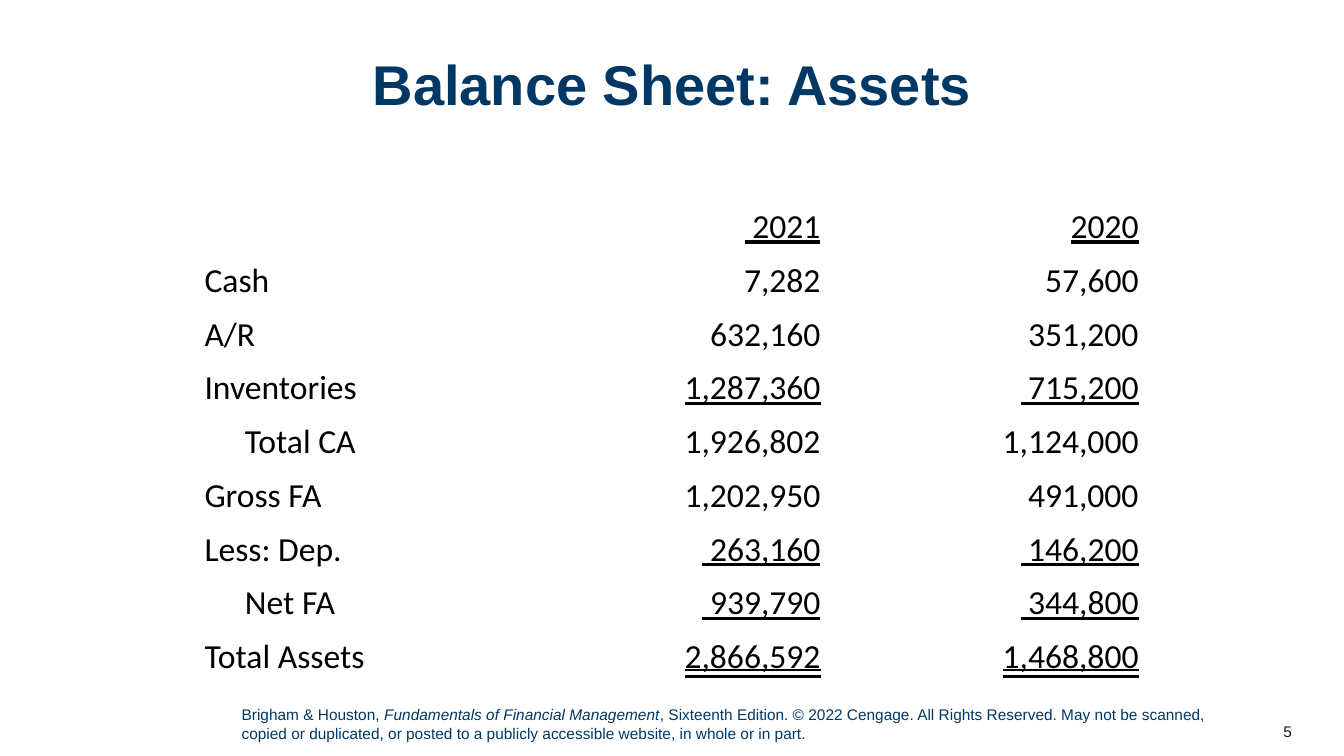
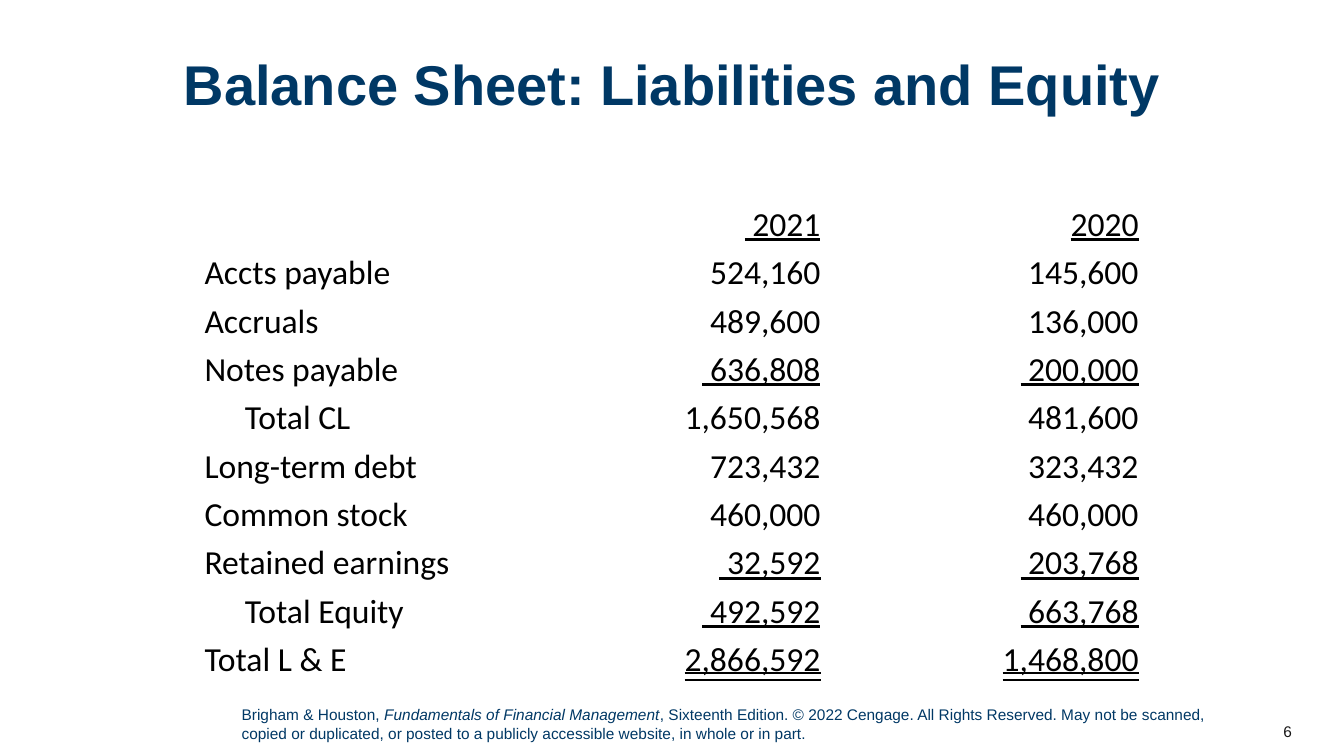
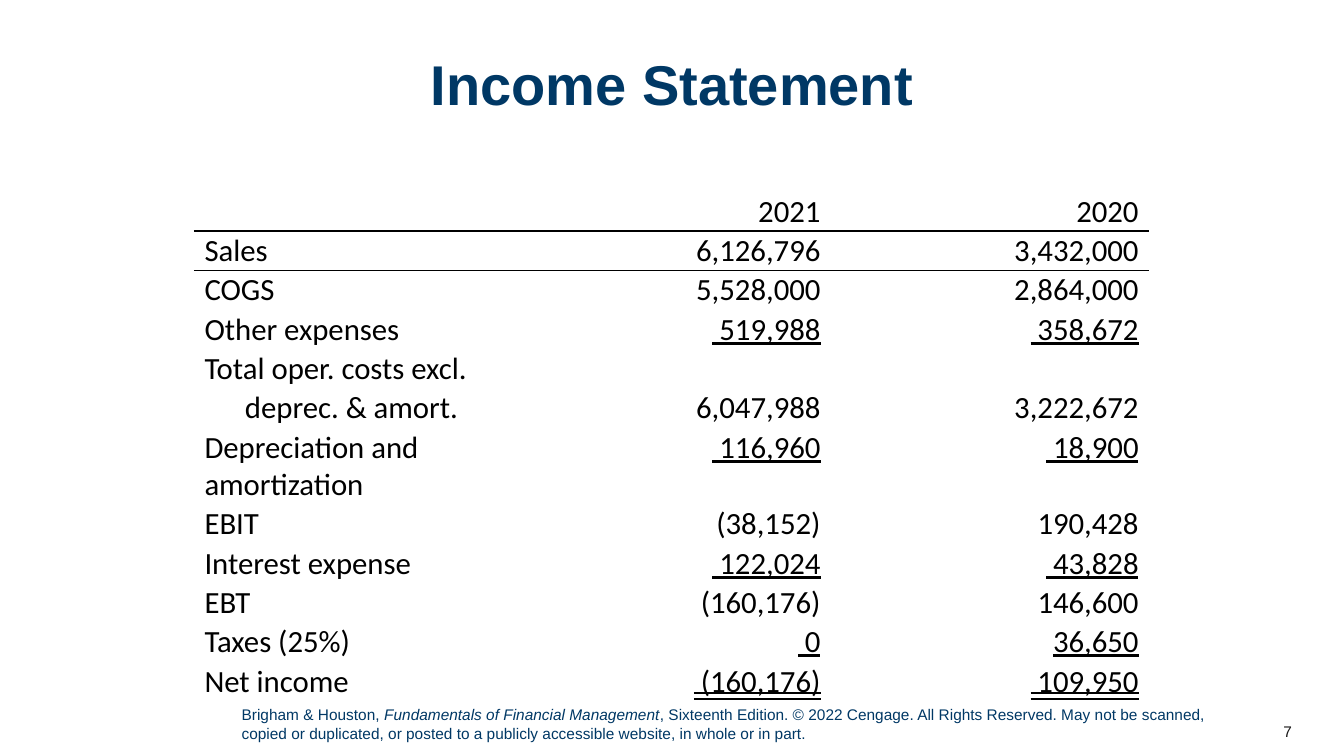
"""Build three financial statement slides with a shared title, footer and table style."""
import pptx
import pptx.dml.color
import pptx.enum.text
import pptx.oxml
import pptx.oxml.ns
import pptx.util

Cm = pptx.util.Cm
Pt = pptx.util.Pt
RGBColor = pptx.dml.color.RGBColor
PP_ALIGN = pptx.enum.text.PP_ALIGN
MSO_ANCHOR = pptx.enum.text.MSO_ANCHOR
MSO_UNDERLINE = pptx.enum.text.MSO_UNDERLINE

NAVY = RGBColor(0x00, 0x38, 0x65)
INK = RGBColor(0x18, 0x17, 0x17)
BLACK = RGBColor(0x00, 0x00, 0x00)
WHITE = RGBColor(0xFF, 0xFF, 0xFF)

HEAD_FONT = "Arial"
TABLE_FONT = "Calibri"
FIRST_NUMBER = 5
TABLE_LEFT, TABLE_WIDTH = Cm(4.9), Cm(24.05)
INDENT_MARK = ">"
UNDERLINES = {"_": MSO_UNDERLINE.SINGLE_LINE, "=": MSO_UNDERLINE.DOUBLE_LINE}

FOOTER = [
    ("Brigham & Houston, ", False),
    ("Fundamentals of Financial Management", True),
    (", Sixteenth Edition. © 2022 Cengage. All Rights Reserved. May not be "
     "scanned, copied or duplicated, or posted to a publicly accessible "
     "website, in whole or in part.", False),
]

ASSETS = [
    ("", "_ 2021", "_2020"),
    ("Cash", "7,282", "57,600"),
    ("A/R", "632,160", "351,200"),
    ("Inventories", "_1,287,360", "_ 715,200"),
    (">Total CA", "1,926,802", "1,124,000"),
    ("Gross FA", "1,202,950", "491,000"),
    ("Less: Dep.", "_ 263,160", "_ 146,200"),
    (">Net FA", "_ 939,790", "_ 344,800"),
    ("Total Assets", "=2,866,592", "=1,468,800"),
]

LIABILITIES = [
    ("", "_ 2021", "_2020"),
    ("Accts payable", "524,160", "145,600"),
    ("Accruals", "489,600", "136,000"),
    ("Notes payable", "_ 636,808", "_ 200,000"),
    (">Total CL", "1,650,568", "481,600"),
    ("Long-term debt", "723,432", "323,432"),
    ("Common stock", "460,000", "460,000"),
    ("Retained earnings", "_ 32,592", "_ 203,768"),
    (">Total Equity", "_ 492,592", "_ 663,768"),
    ("Total L & E", "=2,866,592", "=1,468,800"),
]

INCOME = [
    ("", " 2021", "2020"),
    ("Sales", " 6,126,796", "3,432,000"),
    ("COGS", "5,528,000", "2,864,000"),
    ("Other expenses", "_ 519,988", "_ 358,672"),
    ("Total oper. costs excl.", "", ""),
    (">deprec. & amort.", "6,047,988", "3,222,672"),
    ("Depreciation and amortization", "_ 116,960", "_ 18,900"),
    ("EBIT", "(38,152)", "190,428"),
    ("Interest expense", "_ 122,024", "_ 43,828"),
    ("EBT", "(160,176)", "146,600"),
    ("Taxes (25%)", "_ 0", "_36,650"),
    ("Net income", "=_ (160,176)".replace("_", ""), "= 109,950"),
]


def add_run(p, text, font, size, color, bold=False, italic=False):
    """Add one formatted run to a paragraph."""
    r = p.add_run()
    r.text = text
    r.font.name, r.font.size = font, Pt(size)
    r.font.color.rgb = color
    r.font.bold, r.font.italic = bold, italic
    return r


def set_title(slide, text):
    """Place and fill the title placeholder."""
    sp = slide.shapes.title
    sp.left, sp.top, sp.width, sp.height = Cm(1.32), Cm(1.32), Cm(31.22), Cm(3.38)
    tf = sp.text_frame
    tf.word_wrap = True
    tf.vertical_anchor = MSO_ANCHOR.TOP
    p = tf.paragraphs[0]
    p.alignment = PP_ALIGN.CENTER
    p.line_spacing = 0.9
    add_run(p, text, HEAD_FONT, 40, NAVY, bold=True)


def add_text(slide, box, runs, color, align, anchor):
    """Add a small text box from (text, italic) runs."""
    tf = slide.shapes.add_textbox(*map(Cm, box)).text_frame
    tf.word_wrap = True
    tf.vertical_anchor = anchor
    p = tf.paragraphs[0]
    p.alignment = align
    for text, italic in runs:
        add_run(p, text, HEAD_FONT, 11, color, italic=italic)


def add_footer(slide, number):
    """Add the page number and the copyright line."""
    add_text(slide, (30.78, 17.91, 2.03, 1.02), [(str(number), False)],
             INK, PP_ALIGN.RIGHT, MSO_ANCHOR.MIDDLE)
    add_text(slide, (5.84, 17.65, 24.89, 1.19), FOOTER,
             NAVY, PP_ALIGN.LEFT, MSO_ANCHOR.TOP)


def set_borders(cell, top, bottom):
    """Draw the four borders; top and bottom are (colour, points) pairs."""
    side = (WHITE, 1)
    tcPr = cell._tc.get_or_add_tcPr()
    edges = {"lnL": side, "lnR": side, "lnT": top, "lnB": bottom}
    for i, (tag, (color, width)) in enumerate(edges.items()):
        ln = pptx.oxml.parse_xml(
            f'<a:{tag} {pptx.oxml.ns.nsdecls("a")} w="{Pt(width)}">'
            f'<a:solidFill><a:srgbClr val="{color}"/></a:solidFill></a:{tag}>')
        tcPr.insert(i, ln)


def fill_cell(cell, text, size, margin, align):
    """Write a cell, reading its indent or underline mark."""
    cell.fill.background()
    cell.margin_top = cell.margin_bottom = Cm(margin)
    p = cell.text_frame.paragraphs[0]
    p.alignment = align
    p.font.size = Pt(size)
    if not text:
        return
    if text[0] == INDENT_MARK:
        p._p.get_or_add_pPr().set("marL", str(Cm(1.02)))
    r = add_run(p, text.lstrip(">_="), TABLE_FONT, size, BLACK)
    r.font.underline = UNDERLINES.get(text[0])


def add_statement(slide, rows, top, height, size, margin, rules):
    """Add a statement table; rules gives the line below a row by index."""
    tbl = slide.shapes.add_table(len(rows), len(rows[0]), TABLE_LEFT, Cm(top),
                                 TABLE_WIDTH, Cm(height)).table
    tbl.first_row = tbl.horz_banding = False
    plain = (WHITE, 1)
    for i, row in enumerate(rows):
        for j, text in enumerate(row):
            cell = tbl.cell(i, j)
            align = PP_ALIGN.RIGHT if j else PP_ALIGN.LEFT
            fill_cell(cell, text, size, margin, align)
            set_borders(cell, rules.get(i - 1, plain), rules.get(i, plain))


def main():
    """Build the deck and save it."""
    prs = pptx.Presentation()
    prs.slide_width, prs.slide_height = Cm(33.87), Cm(19.05)
    white_rule = {0: (WHITE, 3)}
    black_rules = {0: (BLACK, 1), 1: (BLACK, 1.5)}
    statements = [
        ("Balance Sheet: Assets", ASSETS, 5.08, 12.19, 24, 0.13, white_rule),
        ("Balance Sheet: Liabilities and Equity", LIABILITIES,
         5.1, 12.19, 24, 0.05, white_rule),
        ("Income Statement", INCOME, 4.83, 11.58, 22, 0.03, black_rules),
    ]
    for number, (title, *table) in enumerate(statements, FIRST_NUMBER):
        slide = prs.slides.add_slide(prs.slide_layouts[5])
        add_footer(slide, number)
        set_title(slide, title)
        add_statement(slide, *table)
    prs.save("out.pptx")


if __name__ == "__main__":
    main()
